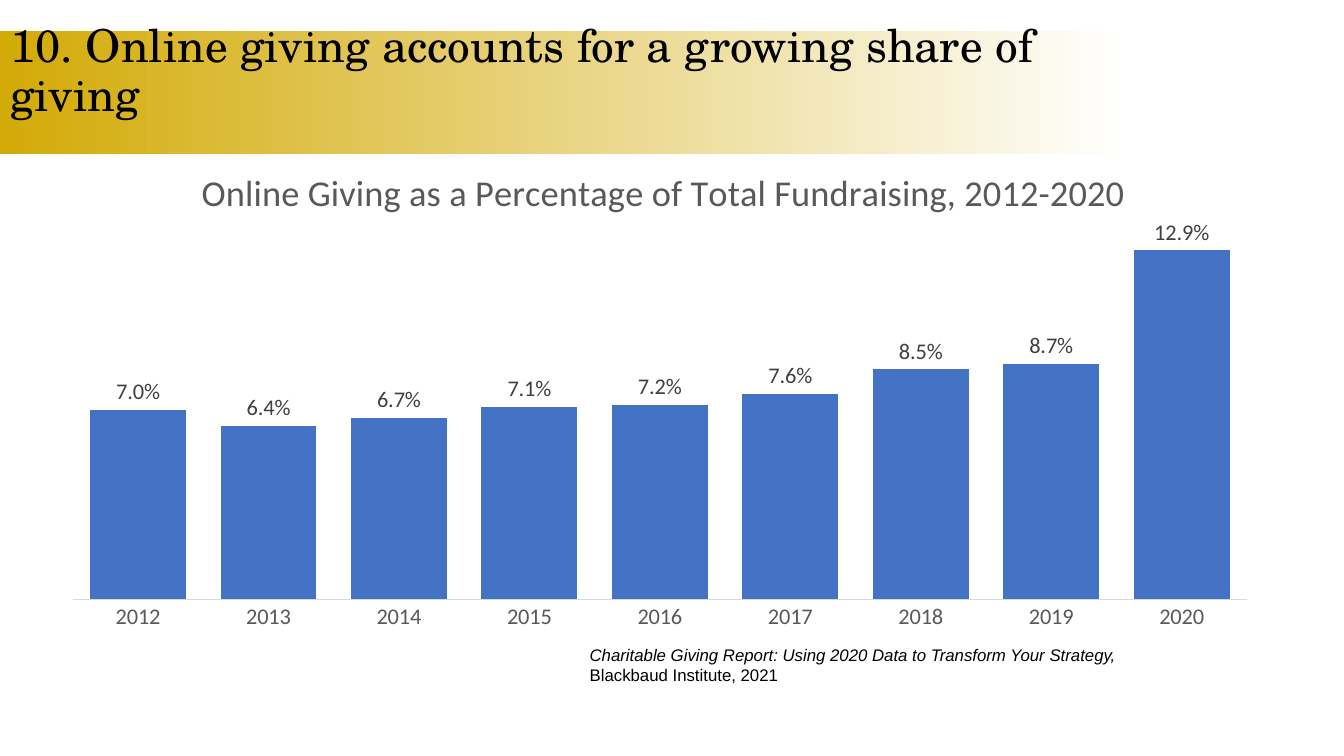
from typing import NamedTuple

from lxml.etree import SubElement
from pptx import Presentation
from pptx.chart.data import CategoryChartData
from pptx.dml.color import RGBColor
from pptx.enum.chart import XL_CHART_TYPE as ChartType
from pptx.enum.chart import XL_LABEL_POSITION as LabelPosition
from pptx.enum.chart import XL_TICK_MARK as TickMark
from pptx.enum.shapes import MSO_SHAPE as Preset
from pptx.enum.text import MSO_ANCHOR as Anchor
from pptx.enum.text import MSO_AUTO_SIZE as AutoSize
from pptx.enum.text import PP_ALIGN as Align
from pptx.oxml.ns import qn
from pptx.util import Inches, Pt

COLORS = {
    "gold": "D3AA07",
    "white": "FFFFFF",
    "black": "000000",
    "bar": "4472C4",
    "label": "404040",
    "axis_text": "595959",
    "axis_line": "D9D9D9",
}
ONLINE_SHARE = {
    "2012": 0.07, "2013": 0.064, "2014": 0.067,
    "2015": 0.071, "2016": 0.072, "2017": 0.076,
    "2018": 0.085, "2019": 0.087, "2020": 0.129,
}


class TextStyle(NamedTuple):
    face: str
    size: float
    color: str
    italic: bool = False


HEADING = TextStyle("TeX Gyre Schola", 32.4, "black")
CHART_BASE = TextStyle("Calibri", 10, "black")
CHART_TITLE = TextStyle("Calibri", 26, "axis_text")
YEAR_LABEL = TextStyle("Calibri", 16, "axis_text")
VALUE_LABEL = TextStyle("Calibri", 16, "label")
CITATION = TextStyle("Arial", 12, "black")
REPORT_NAME = CITATION._replace(italic=True)


def color(name: str) -> RGBColor:
    return RGBColor.from_string(COLORS[name])


def apply_style(font, style: TextStyle) -> None:
    font.name = style.face
    font.size = Pt(style.size)
    font.bold = False
    font.italic = style.italic
    font.color.rgb = color(style.color)


def place(shape, left: float, top: float, width: float, height: float) -> None:
    shape.left, shape.top = Inches(left), Inches(top)
    shape.width, shape.height = Inches(width), Inches(height)


def set_layout(chart_part, **settings) -> None:
    """Fix a chart part's place, as fractions of the chart area."""
    for automatic in chart_part.findall(qn("c:layout")):
        chart_part.remove(automatic)
    layout = SubElement(chart_part, qn("c:layout"))
    chart_part.insert(len(chart_part.findall(qn("c:tx"))), layout)
    manual = SubElement(layout, qn("c:manualLayout"))
    for tag, value in settings.items():
        SubElement(manual, qn(f"c:{tag}")).set("val", str(value))


def add_heading(slide) -> None:
    band = slide.shapes.add_shape(
        Preset.RECTANGLE, 0, Inches(0.31), Inches(11.44), Inches(1.22))
    band.shadow.inherit = False
    band.line.fill.background()
    band.fill.gradient()
    band.fill.gradient_angle = 0
    stops = zip(band.fill.gradient_stops, (("gold", 0), ("white", 0.98)))
    for stop, (name, position) in stops:
        stop.color.rgb = color(name)
        stop.position = position
    slide.shapes._spTree.insert(2, band._element)

    heading = slide.shapes.title
    place(heading, 0, 0.54, 11.5, 0.86)
    frame = heading.text_frame
    frame.text = "10. Online giving accounts for a growing share of giving"
    frame.word_wrap = True
    frame.auto_size = AutoSize.NONE
    frame.vertical_anchor = Anchor.MIDDLE
    frame.margin_bottom = Inches(0.55)
    paragraph = frame.paragraphs[0]
    paragraph.alignment = Align.LEFT
    paragraph.line_spacing = 0.9
    apply_style(paragraph.runs[0].font, HEADING)


def add_giving_chart(slide) -> None:
    data = CategoryChartData(number_format="0.0%")
    data.categories = list(ONLINE_SHARE)
    data.add_series("Series 1", list(ONLINE_SHARE.values()))
    chart = slide.shapes.add_chart(
        ChartType.COLUMN_CLUSTERED, Inches(0.48), Inches(1.4),
        Inches(12.13), Inches(4.94), data).chart
    apply_style(chart.font, CHART_BASE)
    chart.has_legend = False

    chart.has_title = True
    title = chart.chart_title
    title.text_frame.text = (
        "Online Giving as a Percentage of Total Fundraising, 2012-2020")
    apply_style(title.text_frame.paragraphs[0].runs[0].font, CHART_TITLE)
    set_layout(title._element, xMode="edge", yMode="edge", x=0.12, y=0.04)
    set_layout(chart._chartSpace.chart.plotArea,
               layoutTarget="inner", xMode="edge", yMode="edge",
               x=0.02, y=0.16, w=0.96, h=0.76)

    years = chart.category_axis
    years.major_tick_mark = years.minor_tick_mark = TickMark.NONE
    years.has_major_gridlines = False
    years.format.line.color.rgb = color("axis_line")
    years.format.line.width = Pt(0.75)
    apply_style(years.tick_labels.font, YEAR_LABEL)

    shares = chart.value_axis
    shares.minimum_scale, shares.maximum_scale = 0, 0.14
    shares.has_major_gridlines = False
    shares.tick_labels.number_format = "0.0%"
    shares.tick_labels.number_format_is_linked = False
    shares.visible = False

    plot = chart.plots[0]
    plot.vary_by_categories = False
    plot.gap_width = 36
    plot.overlap = 58
    bars = plot.series[0]
    bars.format.fill.solid()
    bars.format.fill.fore_color.rgb = color("bar")
    labels = bars.data_labels
    labels.show_value = True
    labels.number_format = "0.0%"
    labels.number_format_is_linked = False
    labels.position = LabelPosition.OUTSIDE_END
    apply_style(labels.font, VALUE_LABEL)


def add_citation(slide) -> None:
    citation = slide.shapes.add_textbox(
        Inches(5.75), Inches(6.35), Inches(6.23), Inches(0.5))
    frame = citation.text_frame
    frame.word_wrap = True
    frame.auto_size = AutoSize.SHAPE_TO_FIT_TEXT
    parts = (
        ("Charitable Giving Report: Using 2020 Data to Transform Your Strategy,",
         REPORT_NAME),
        (" Blackbaud Institute, 2021", CITATION),
    )
    for wording, style in parts:
        run = frame.paragraphs[0].add_run()
        run.text = wording
        apply_style(run.font, style)


def main() -> None:
    deck = Presentation()
    deck.slide_width, deck.slide_height = Inches(13.33), Inches(7.5)
    slide = deck.slides.add_slide(deck.slide_layouts[5])
    add_heading(slide)
    add_giving_chart(slide)
    add_citation(slide)
    deck.save("out.pptx")


if __name__ == "__main__":
    main()
